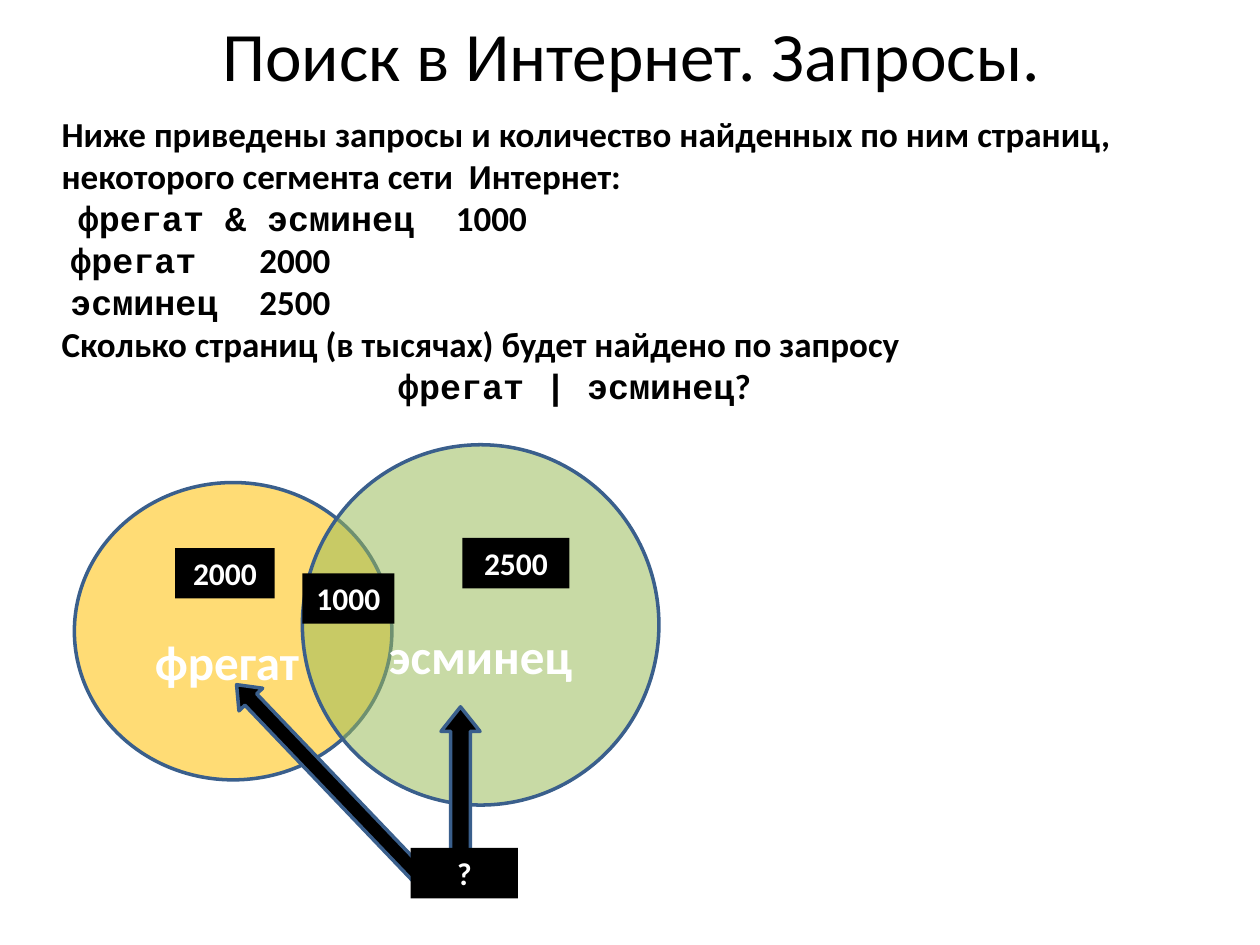
from dataclasses import dataclass

from lxml import etree
from pptx import Presentation
from pptx import util as u
from pptx.dml.color import RGBColor
from pptx.enum import shapes, text
from pptx.oxml.ns import qn


@dataclass(frozen=True)
class Theme:
    ink: str = "000000"
    light: str = "FFFFFF"
    outline: str = "3A5F8C"
    frigate: str = "FFC000"
    destroyer: str = "9BBB59"
    opacity: int = 54
    body_font: str = "Calibri"
    query_font: str = "Courier New"
    title_size: float = 39.6
    body_size: int = 20
    set_size: int = 28
    count_size: int = 18
    line_width: int = 2


THEME = Theme()
CENTER = text.PP_ALIGN.CENTER


def write(paragraph, content, size=THEME.body_size, color=THEME.ink,
          font=THEME.body_font, bold=True, align=None):
    run = paragraph.add_run()
    run.text = content
    run.font.size = u.Pt(size)
    run.font.name = font
    run.font.bold = bold
    run.font.color.rgb = RGBColor.from_string(color)
    if align is not None:
        paragraph.alignment = align


def set_layout(paragraph, indent, tab=None):
    properties = paragraph._p.get_or_add_pPr()
    properties.set("marL", str(u.Inches(indent)))
    properties.set("indent", "0")
    if tab is not None:
        tabs = etree.SubElement(properties, qn("a:tabLst"))
        etree.SubElement(tabs, qn("a:tab"), pos=str(u.Inches(tab)), algn="l")


def add_figure(slide, preset, box, fill, outlined=True, opacity=None):
    figure = slide.shapes.add_shape(preset, *map(u.Inches, box))
    figure.shadow.inherit = False
    figure.fill.solid()
    figure.fill.fore_color.rgb = RGBColor.from_string(fill)
    if opacity is not None:
        color = figure.fill._xPr.find(qn("a:solidFill"))[0]
        etree.SubElement(color, qn("a:alpha"), val=str(opacity * 1000))
    if outlined:
        figure.line.color.rgb = RGBColor.from_string(THEME.outline)
        figure.line.width = u.Pt(THEME.line_width)
    else:
        figure.line.fill.background()
    return figure


def add_title(slide, box):
    title = slide.shapes.title
    title.left, title.top, title.width, title.height = map(u.Inches, box)
    frame = title.text_frame
    frame.auto_size = text.MSO_AUTO_SIZE.NONE
    frame.vertical_anchor = text.MSO_ANCHOR.MIDDLE
    write(frame.paragraphs[0], "Поиск в Интернет. Запросы.",
          size=THEME.title_size, bold=False, align=CENTER)


def add_task(slide, box):
    frame = slide.shapes.add_textbox(*map(u.Inches, box)).text_frame
    frame.word_wrap = True
    write(frame.paragraphs[0], "Ниже приведены запросы и количество найденных "
          "по ним страниц, некоторого сегмента сети  Интернет:")
    for query, pages, indent in (("фрегат & эсминец", "1000", 0.13),
                                 ("фрегат", "2000", 0.07),
                                 ("эсминец", "2500", 0.07)):
        row = frame.add_paragraph()
        set_layout(row, indent, tab=4)
        write(row, query, font=THEME.query_font)
        write(row, "\t" + pages)
    write(frame.add_paragraph(),
          "Сколько страниц (в тысячах) будет найдено по запросу")
    question = frame.add_paragraph()
    set_layout(question, 2.67)
    write(question, "фрегат | эсминец", font=THEME.query_font)
    write(question, "?")


def add_set(slide, box, name, fill, left_inset):
    circle = add_figure(slide, shapes.MSO_SHAPE.OVAL, box, fill,
                        opacity=THEME.opacity)
    frame = circle.text_frame
    frame.word_wrap = True
    frame.vertical_anchor = text.MSO_ANCHOR.MIDDLE
    frame.margin_left = u.Inches(left_inset)
    frame.margin_top = u.Inches(0.52)
    write(frame.paragraphs[0], name, size=THEME.set_size, color=THEME.light,
          align=CENTER)


def add_count(slide, box, count):
    label = add_figure(slide, shapes.MSO_SHAPE.RECTANGLE, box, THEME.ink,
                       outlined=False)
    label.text_frame.word_wrap = True
    label.text_frame.vertical_anchor = text.MSO_ANCHOR.TOP
    write(label.text_frame.paragraphs[0], count, size=THEME.count_size,
          color=THEME.light, align=CENTER)


def add_pointer(slide, box, rotation=0):
    pointer = add_figure(slide, shapes.MSO_SHAPE.UP_ARROW, box, THEME.ink)
    pointer.adjustments[0] = 0.5
    pointer.adjustments[1] = 0.63
    pointer.rotation = rotation


def add_venn(slide, box):
    left, top = box[:2]

    def place(x, y, width, height):
        return left + x, top + y, width, height

    add_set(slide, place(0, 0.3, 2.52, 2.36), "фрегат", THEME.frigate, 0)
    add_set(slide, place(1.81, 0, 2.83, 2.86), "эсминец", THEME.destroyer, 0.1)
    for x, y, width, count in ((1.81, 1.02, 0.73, "1000"),
                               (0.8, 0.82, 0.79, "2000"),
                               (3.08, 0.74, 0.85, "2500")):
        add_count(slide, place(x, y, width, 0.4), count)
    add_pointer(slide, place(1.89, 1.61, 0.26, 2.12), rotation=316.3)
    add_pointer(slide, place(2.91, 2.08, 0.31, 1.15))
    add_count(slide, place(2.67, 3.2, 0.85, 0.4), "?")


def main():
    deck = Presentation()
    deck.slide_width, deck.slide_height = u.Inches(10), u.Inches(7.5)
    slide = deck.slides.add_slide(deck.slide_layouts[5])
    add_title(slide, (0.51, 0.13, 9, 0.59))
    add_task(slide, (0.39, 0.84, 9.49, 2.46))
    add_venn(slide, (0.59, 3.53, 4.64, 3.6))
    deck.save("out.pptx")


if __name__ == "__main__":
    main()
